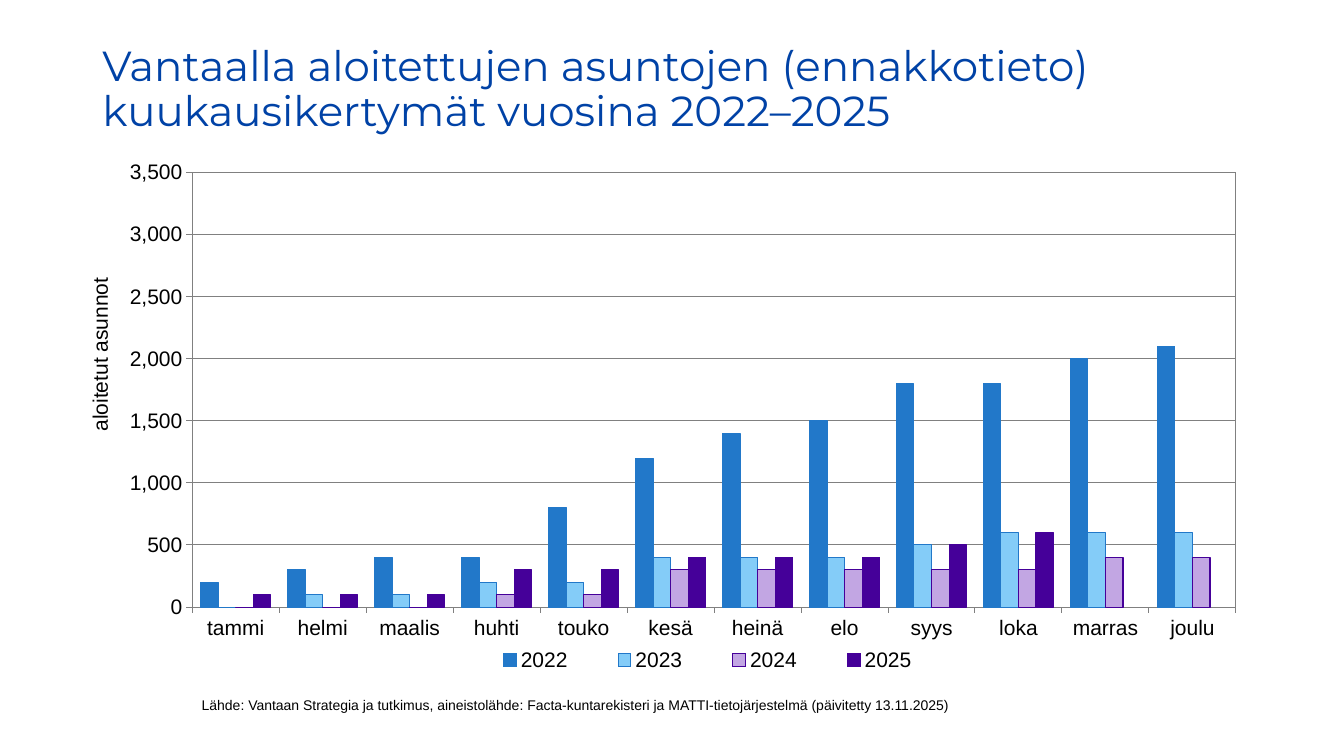
from dataclasses import dataclass

from lxml.etree import SubElement
from pptx import Presentation
from pptx.chart.data import CategoryChartData
from pptx.dml.color import RGBColor
from pptx.enum.chart import XL_CHART_TYPE as ChartType
from pptx.enum.chart import XL_LEGEND_POSITION as LegendPosition
from pptx.enum.chart import XL_TICK_MARK as TickMark
from pptx.enum.text import MSO_ANCHOR as Anchor
from pptx.enum.text import MSO_AUTO_SIZE as AutoSize
from pptx.enum.text import PP_ALIGN as Align
from pptx.oxml import parse_xml
from pptx.oxml.ns import nsdecls, qn
from pptx.util import Pt


@dataclass(frozen=True)
class Theme:
    heading_font: str = "Montserrat"
    body_font: str = "Arial"
    heading_size: int = 30
    chart_size: int = 15
    source_size: int = 10
    heading: str = "0042A6"
    text: str = "000000"
    grid: str = "808080"
    blue: str = "2278C9"
    sky: str = "84CCF8"
    lilac: str = "C2A6E3"
    violet: str = "450099"


MONTHS = ("tammi", "helmi", "maalis", "huhti", "touko", "kesä",
          "heinä", "elo", "syys", "loka", "marras", "joulu")
STARTED_HOMES = {
    "2022": (200, 300, 400, 400, 800, 1200, 1400, 1500, 1800, 1800, 2000, 2100),
    "2023": (0, 100, 100, 200, 200, 400, 400, 400, 500, 600, 600, 600),
    "2024": (0, 0, 0, 100, 100, 300, 300, 300, 300, 300, 400, 400),
    "2025": (100, 100, 100, 300, 300, 400, 400, 400, 500, 600, None, None),
}


class SlideBuilder:
    def __init__(self, presentation, theme):
        self.theme = theme
        self.slide = presentation.slides.add_slide(presentation.slide_layouts[5])

    def style_font(self, font, name, size, color):
        font.name = name
        font.size = Pt(size)
        font.bold = False
        font.color.rgb = RGBColor.from_string(color)

    def style_line(self, line, color):
        line.width = Pt(0.75)
        line.color.rgb = RGBColor.from_string(color)

    def add_run(self, paragraph, text, name, size, color):
        run = paragraph.add_run()
        run.text = text
        self.style_font(run.font, name, size, color)

    def add_title(self, text, left, top, width, height):
        shape = self.slide.shapes.title
        shape.left, shape.top = Pt(left), Pt(top)
        shape.width, shape.height = Pt(width), Pt(height)
        frame = shape.text_frame
        frame.word_wrap = True
        frame.auto_size = AutoSize.NONE
        frame.vertical_anchor = Anchor.TOP
        paragraph = frame.paragraphs[0]
        paragraph.alignment = Align.LEFT
        paragraph.line_spacing = 0.9
        self.add_run(paragraph, text, self.theme.heading_font,
                     self.theme.heading_size, self.theme.heading)

    def add_source(self, text, left, top, width, height):
        shape = self.slide.shapes.add_textbox(Pt(left), Pt(top), Pt(width), Pt(height))
        shape.text_frame.word_wrap = True
        self.add_run(shape.text_frame.paragraphs[0], text, self.theme.body_font,
                     self.theme.source_size, self.theme.text)

    def place(self, element, index, **fractions):
        for old_layout in element.findall(qn("c:layout")):
            element.remove(old_layout)
        layout = parse_xml(f"<c:layout {nsdecls('c')}/>")
        manual = SubElement(layout, qn("c:manualLayout"))
        if index == 0:
            SubElement(manual, qn("c:layoutTarget")).set("val", "inner")
        for mode in ("xMode", "yMode"):
            SubElement(manual, qn(f"c:{mode}")).set("val", "edge")
        for key, value in fractions.items():
            SubElement(manual, qn(f"c:{key}")).set("val", str(value))
        element.insert(index, layout)

    def add_column_chart(self, months, yearly, left, top, width, height):
        data = CategoryChartData(number_format="General")
        data.categories = months
        for year, values in yearly.items():
            data.add_series(year, values)
        chart = self.slide.shapes.add_chart(
            ChartType.COLUMN_CLUSTERED, Pt(left), Pt(top), Pt(width), Pt(height), data).chart
        chart.has_title = False
        self.style_font(chart.font, self.theme.body_font, self.theme.chart_size, self.theme.text)
        self.style_columns(chart.plots[0])
        self.style_axes(chart)
        self.style_legend(chart)
        self.style_plot_area(chart)

    def style_columns(self, plot):
        theme = self.theme
        plot.gap_width = 96
        plot.overlap = 0
        plot.vary_by_categories = False
        colors = ((theme.blue, theme.blue), (theme.sky, theme.blue),
                  (theme.lilac, theme.violet), (theme.violet, theme.violet))
        for series, (fill, outline) in zip(plot.series, colors):
            series.invert_if_negative = False
            series.format.fill.solid()
            series.format.fill.fore_color.rgb = RGBColor.from_string(fill)
            self.style_line(series.format.line, outline)

    def style_axes(self, chart):
        theme = self.theme
        for axis in (chart.category_axis, chart.value_axis):
            axis.major_tick_mark = TickMark.OUTSIDE
            axis.minor_tick_mark = TickMark.NONE
            self.style_line(axis.format.line, theme.grid)
        axis = chart.value_axis
        axis.minimum_scale, axis.maximum_scale, axis.major_unit = 0, 3500, 500
        axis.tick_labels.number_format = "#,##0"
        axis.tick_labels.number_format_is_linked = False
        axis.has_major_gridlines = True
        self.style_line(axis.major_gridlines.format.line, theme.grid)
        frame = axis.axis_title.text_frame
        self.add_run(frame.paragraphs[0], "aloitetut asunnot", theme.body_font,
                     theme.chart_size, theme.text)
        title = chart.element.find(f".//{qn('c:valAx')}/{qn('c:title')}")
        body = title.find(f".//{qn('a:bodyPr')}")
        body.set("rot", "-5400000")
        body.set("vert", "horz")
        self.place(title, 1, x=0, y=0.23)

    def style_legend(self, chart):
        chart.has_legend = True
        chart.legend.position = LegendPosition.BOTTOM
        chart.legend.include_in_layout = False
        legend = chart.element.find(f".//{qn('c:legend')}")
        self.place(legend, 1, x=0.32, y=0.93, w=0.42, h=0.06)

    def style_plot_area(self, chart):
        area = chart.element.find(f".//{qn('c:plotArea')}")
        self.place(area, 0, x=0.093, y=0.039, w=0.885, h=0.821)
        area.append(parse_xml(
            f"<c:spPr {nsdecls('c', 'a')}><a:noFill/><a:ln w='9525'><a:solidFill>"
            f"<a:srgbClr val='{self.theme.grid}'/></a:solidFill></a:ln></c:spPr>"))


def main():
    presentation = Presentation()
    presentation.slide_width, presentation.slide_height = Pt(960), Pt(540)
    builder = SlideBuilder(presentation, Theme())
    builder.add_title(
        "Vantaalla aloitettujen asuntojen (ennakkotieto) kuukausikertymät vuosina 2022–2025",
        66, 28.8, 828, 104)
    builder.add_source(
        "Lähde: Vantaan Strategia ja tutkimus, aineistolähde: Facta-kuntarekisteri ja "
        "MATTI-tietojärjestelmä (päivitetty 13.11.2025)", 137, 494, 660, 30)
    builder.add_column_chart(MONTHS, STARTED_HOMES, 59, 108.6, 842.4, 378)
    presentation.save("out.pptx")


if __name__ == "__main__":
    main()
